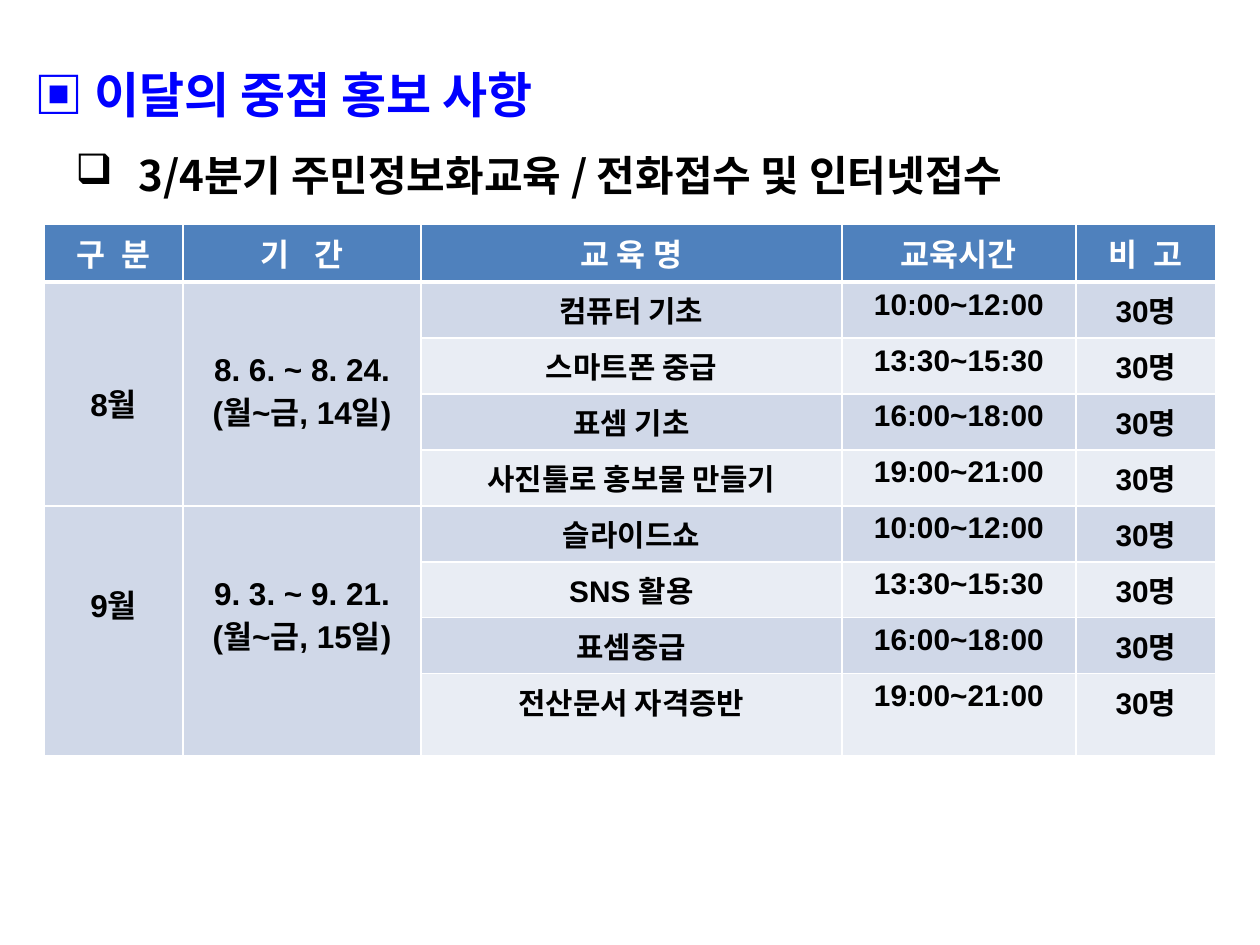
from lxml import etree
from pptx import Presentation
from pptx.dml.color import RGBColor
from pptx.enum.text import PP_ALIGN
from pptx.oxml.ns import qn
from pptx.util import Pt

PX = 7257.14  # EMU per px, at 126 px to the inch
CENTER = PP_ALIGN.CENTER
WHITE = RGBColor(0xFF, 0xFF, 0xFF)
BLACK = RGBColor(0, 0, 0)
BLUE = RGBColor(0, 0, 0xFF)
HEADER_FILL = RGBColor(0x4F, 0x81, 0xBD)
BAND_FILLS = [RGBColor(0xD0, 0xD8, 0xE8), RGBColor(0xE9, 0xED, 0xF4)]
LATIN_FONT, KOREAN_FONT = "Arial", "Noto Sans CJK KR"

TITLE = "▣ 이달의 중점 홍보 사항"
SUBTITLE = "3/4분기 주민정보화교육 / 전화접수 및 인터넷접수"
# Heading and its letter spacing in hundredths of a point
HEADERS = [("구 분", 250), ("기 간", 500), ("교 육 명", 0), ("교육시간", 0), ("비 고", 250)]
TIMES = ["10:00~12:00", "13:30~15:30", "16:00~18:00", "19:00~21:00"]
CAPACITY = "30명"
# Month, top margin of the month in px, period lines, courses
MONTHS = [
    ("8월", 98, ["8. 6. ~ 8. 24.", "(월~금, 14일)"],
     ["컴퓨터 기초", "스마트폰 중급", "표셈 기초", "사진툴로 홍보물 만들기"]),
    ("9월", 75, ["9. 3. ~ 9. 21.", "(월~금, 15일)"],
     ["슬라이드쇼", "SNS 활용", "표셈중급", "전산문서 자격증반"]),
]
PERIOD_TOP = 71
COLUMN_WIDTHS = [139, 238, 421, 234, 140]
ROW_HEIGHTS = [58] + [56] * 7 + [82]
TABLE_LEFT, TABLE_TOP = 44, 224


def px(length):
    return round(length * PX)


def style(paragraph, size, color, latin=LATIN_FONT, spacing=0):
    font = paragraph.font
    font.size, font.bold, font.name = Pt(size), True, latin
    font.color.rgb = color
    properties = paragraph._p.pPr.find(qn("a:defRPr"))
    etree.SubElement(properties, qn("a:ea"), typeface=KOREAN_FONT)
    if spacing:
        properties.set("spc", str(spacing))


def write_cell(cell, lines, size, color=BLACK, top=6, spacing=0):
    cell.margin_top = px(top)
    frame = cell.text_frame
    frame.text = "\n".join(lines)
    for paragraph in frame.paragraphs:
        paragraph.alignment = CENTER
        style(paragraph, size, color, spacing=spacing)


def add_borders(cell, top, bottom):
    """Draw white borders; top and bottom are widths in points."""
    properties = cell._tc.get_or_add_tcPr()
    sides = [("lnL", 1), ("lnR", 1), ("lnT", top), ("lnB", bottom)]
    for index, (side, width) in enumerate(sides):
        line = etree.Element(qn(f"a:{side}"), w=str(Pt(width)))
        fill = etree.SubElement(line, qn("a:solidFill"))
        etree.SubElement(fill, qn("a:srgbClr"), val=str(WHITE))
        properties.insert(index, line)


def add_schedule(slide):
    table = slide.shapes.add_table(
        len(ROW_HEIGHTS), len(COLUMN_WIDTHS), px(TABLE_LEFT), px(TABLE_TOP),
        px(sum(COLUMN_WIDTHS)), px(sum(ROW_HEIGHTS))).table
    for column, width in zip(table.columns, COLUMN_WIDTHS):
        column.width = px(width)
    for row, height in zip(table.rows, ROW_HEIGHTS):
        row.height = px(height)

    for row_index in range(len(ROW_HEIGHTS)):
        for column_index in range(len(COLUMN_WIDTHS)):
            cell = table.cell(row_index, column_index)
            band = 0 if column_index < 2 else (row_index - 1) % 2
            cell.fill.solid()
            cell.fill.fore_color.rgb = BAND_FILLS[band] if row_index else HEADER_FILL
            add_borders(cell, 3 if row_index == 1 else 1, 3 if row_index == 0 else 1)

    for column_index, (heading, spacing) in enumerate(HEADERS):
        write_cell(table.cell(0, column_index), [heading], 18, WHITE, spacing=spacing)
    for month_index, (month, month_top, period, courses) in enumerate(MONTHS):
        first = 1 + month_index * len(TIMES)
        last = first + len(TIMES) - 1
        for column_index, lines, top in [(0, [month], month_top), (1, period, PERIOD_TOP)]:
            cell = table.cell(first, column_index)
            cell.merge(table.cell(last, column_index))
            write_cell(cell, lines, 18, top=top)
        for row_index, (course, time) in enumerate(zip(courses, TIMES), first):
            for column_index, text in enumerate([course, time, CAPACITY], 2):
                write_cell(table.cell(row_index, column_index), [text], 17)


def add_headings(slide):
    frame = slide.shapes.add_textbox(0, 0, px(1176), px(318)).text_frame
    frame.word_wrap = True
    title, subtitle = frame.paragraphs[0], frame.add_paragraph()
    title.text, subtitle.text = TITLE, SUBTITLE
    title.line_spacing, subtitle.line_spacing = 2.0, 1.5
    subtitle.level = 1
    title_properties = title._p.get_or_add_pPr()
    title_properties.set("marL", str(px(22)))
    title_properties.set("indent", "0")
    properties = subtitle._p.get_or_add_pPr()
    properties.set("marL", str(px(126)))
    properties.set("indent", str(px(-63)))
    bullet_color = etree.SubElement(properties, qn("a:buClr"))
    etree.SubElement(bullet_color, qn("a:srgbClr"), val=str(BLACK))
    etree.SubElement(properties, qn("a:buChar"), char="❑")
    style(title, 28, BLUE, KOREAN_FONT)
    style(subtitle, 24, BLACK, KOREAN_FONT)


def main():
    presentation = Presentation()
    presentation.slide_width, presentation.slide_height = px(1260), px(945)
    slide = presentation.slides.add_slide(presentation.slide_layouts[6])
    add_schedule(slide)
    add_headings(slide)
    presentation.save("out.pptx")


if __name__ == "__main__":
    main()
